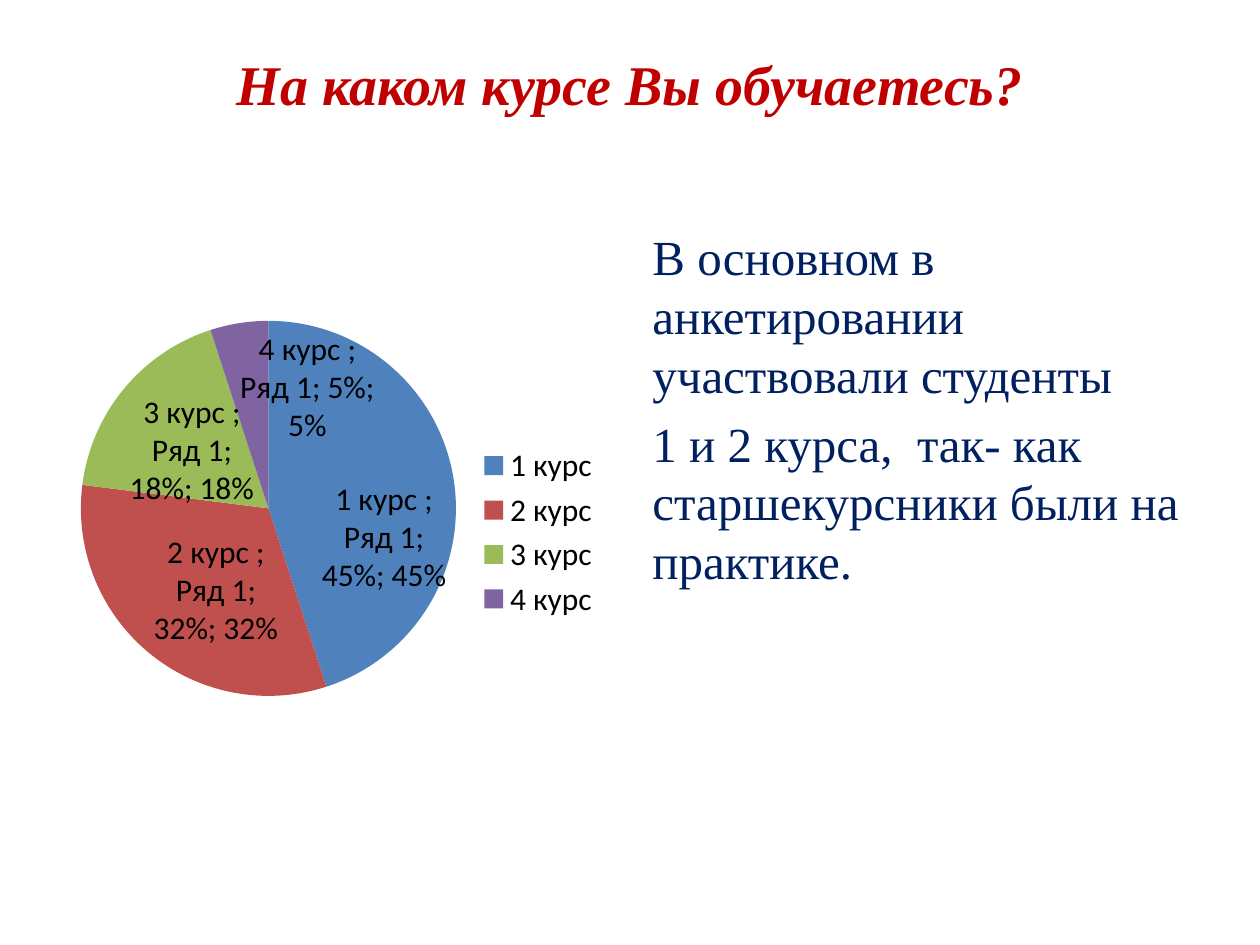
from pptx import Presentation
from pptx.chart.data import CategoryChartData
from pptx.dml.color import RGBColor
from pptx.enum.chart import XL_CHART_TYPE, XL_LABEL_POSITION, XL_LEGEND_POSITION
from pptx.enum.text import MSO_ANCHOR, PP_ALIGN
from pptx.util import Inches, Pt

COLORS = {
    "title": "C00000",
    "body": "002060",
    "label": "000000",
    "course 1": "4F81BD",
    "course 2": "C0504D",
    "course 3": "9BBB59",
    "course 4": "8064A2",
}


def set_font(font, size, color, name="Times New Roman", bold=False, italic=False):
    font.size = Pt(size)
    font.name = name
    font.bold = bold
    font.italic = italic
    font.color.rgb = RGBColor.from_string(COLORS[color])


def write_text(para, text, align=PP_ALIGN.LEFT, before=0, **style):
    para.alignment = align
    para.space_before = Pt(before)
    span = para.add_run()
    span.text = text
    set_font(span.font, **style)


class SlideBuilder:
    def __init__(self, page):
        self.page = page

    def text(self, left, top, width, height, lines,
             anchor=MSO_ANCHOR.TOP, bottom=0.05, **style):
        box = self.page.shapes.add_textbox(
            Inches(left), Inches(top), Inches(width), Inches(height))
        frame = box.text_frame
        frame.word_wrap = True
        frame.vertical_anchor = anchor
        frame.margin_bottom = Inches(bottom)
        for index, line in enumerate(lines):
            para = frame.add_paragraph() if index else frame.paragraphs[0]
            write_text(para, line, **style)

    def pie(self, left, top, width, height, series_name, shares):
        data = CategoryChartData(number_format="0%")
        data.categories = list(shares)
        data.add_series(series_name, list(shares.values()))
        chart = self.page.shapes.add_chart(
            XL_CHART_TYPE.PIE, Inches(left), Inches(top),
            Inches(width), Inches(height), data).chart
        set_font(chart.font, 18, "label", name="Calibri")
        chart.has_title = False
        chart.has_legend = True
        chart.legend.position = XL_LEGEND_POSITION.RIGHT
        chart.legend.include_in_layout = False

        plot = chart.plots[0]
        plot.vary_by_categories = True
        for index in range(len(shares)):
            fill = plot.series[0].points[index].format.fill
            fill.solid()
            fill.fore_color.rgb = RGBColor.from_string(COLORS[f"course {index + 1}"])

        plot.has_data_labels = True
        labels = plot.data_labels
        labels.number_format = "0%"
        labels.number_format_is_linked = False
        labels.position = XL_LABEL_POSITION.INSIDE_END
        labels.show_category_name = True
        labels.show_series_name = True
        labels.show_value = True
        labels.show_percentage = True


def main():
    deck = Presentation()
    deck.slide_width = Inches(10)
    deck.slide_height = Inches(7.5)
    builder = SlideBuilder(deck.slides.add_slide(deck.slide_layouts[6]))

    builder.text(0.5, 0.3, 9, 1.25, ["На каком курсе Вы обучаетесь?"],
                 anchor=MSO_ANCHOR.MIDDLE, bottom=0.58, align=PP_ALIGN.CENTER,
                 size=32, color="title", bold=True, italic=True)
    builder.pie(0.5, 1.75, 4.42, 4.95, "Ряд 1",
                {"1 курс ": 0.45, "2 курс ": 0.32, "3 курс ": 0.18, "4 курс ": 0.05})
    builder.text(5.08, 1.75, 4.42, 4.95,
                 ["В основном в анкетировании участвовали студенты",
                  "1 и 2 курса,  так- как старшекурсники были на практике."],
                 before=5.6, size=28, color="body")

    deck.save("out.pptx")


if __name__ == "__main__":
    main()
